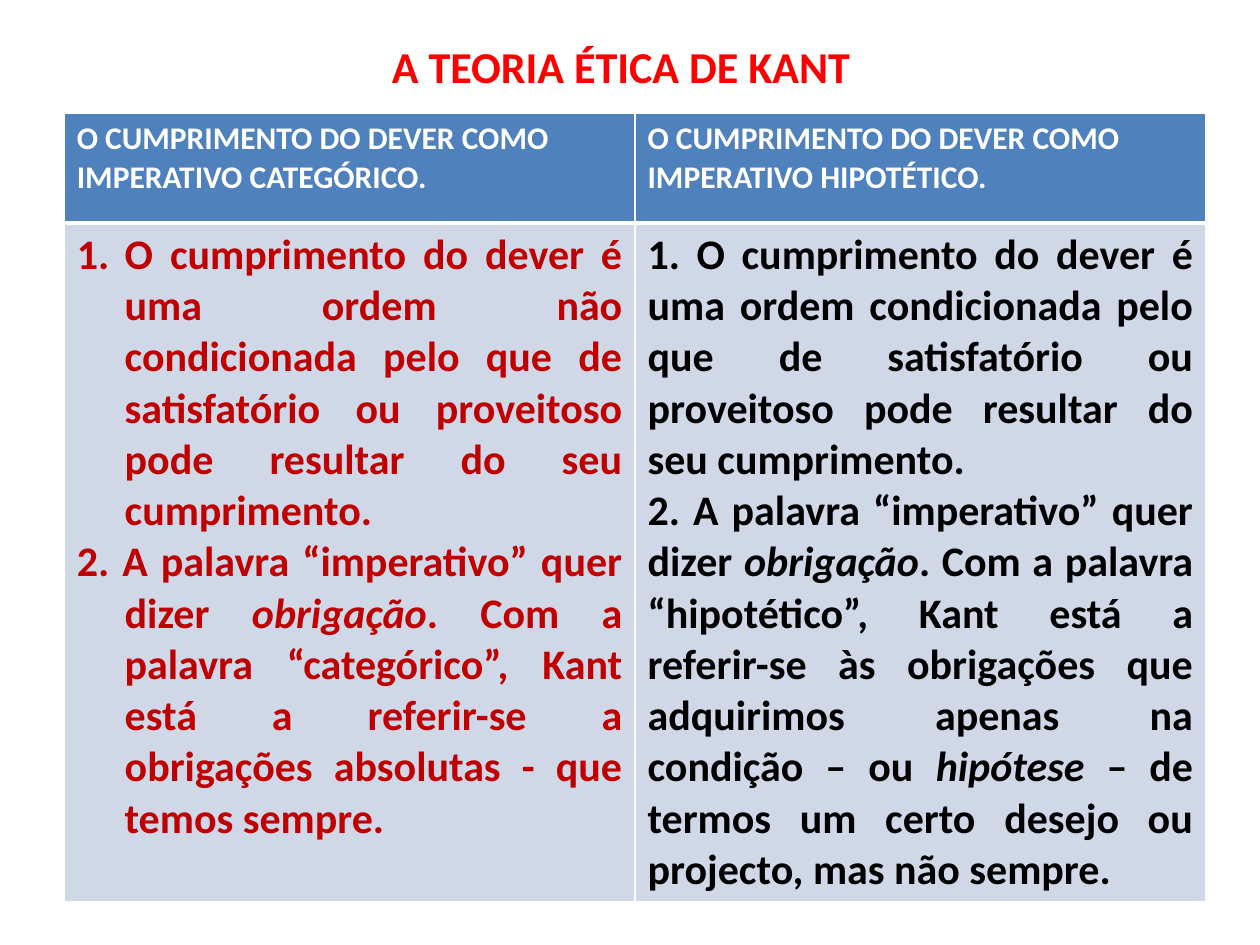
from dataclasses import dataclass

from lxml import etree
from pptx import Presentation
from pptx.dml.color import RGBColor
from pptx.enum.text import MSO_ANCHOR, PP_ALIGN
from pptx.oxml.ns import qn
from pptx.util import Inches, Pt

MID = MSO_ANCHOR.MIDDLE
LEFT, CENTER, JUST = PP_ALIGN.LEFT, PP_ALIGN.CENTER, PP_ALIGN.JUSTIFY
WIDE, HIGH = Inches(10), Inches(7.5)
INDENT = Inches(0.38)


@dataclass
class Theme:
    font: str = "Calibri"
    title: str = "FF0000"
    head: str = "4F81BD"
    body: str = "D0D8E8"
    white: str = "FFFFFF"
    red: str = "C00000"
    black: str = "000000"
    big: float = 25.2
    mid: float = 24
    small: float = 18


class Deck:
    def __init__(self, theme):
        self.theme = theme
        self.file = Presentation()
        self.file.slide_width, self.file.slide_height = WIDE, HIGH
        self.slide = self.file.slides.add_slide(self.file.slide_layouts[5])

    def place(self, x, y, w, h):
        """Turn shares of the slide into lengths."""
        return int(x * WIDE), int(y * HIGH), int(w * WIDE), int(h * HIGH)

    def add_runs(self, para, runs, size, color, align):
        """Fill a paragraph; every second run is italic."""
        para.alignment = align
        for i, text in enumerate(runs):
            run = para.add_run()
            run.text = text
            font = run.font
            font.name, font.size, font.bold = self.theme.font, Pt(size), True
            font.italic = i % 2 == 1
            font.color.rgb = RGBColor.from_string(color)

    def title(self, text, box):
        shape = self.slide.shapes.title
        shape.left, shape.top, shape.width, shape.height = self.place(*box)
        frame = shape.text_frame
        frame.vertical_anchor, frame.word_wrap = MID, True
        self.add_runs(frame.paragraphs[0], [text], self.theme.big, self.theme.title, CENTER)

    def table(self, box, rows, cols):
        """Add a table whose rows are given as shares of its height."""
        frame = self.slide.shapes.add_table(len(rows), cols, *self.place(*box))
        for row, part in zip(frame.table.rows, rows):
            row.height = int(part * box[3] * HIGH)
        return frame.table

    def cell(self, cell, paras, fill, size, color, align, base=1):
        """Style one cell and add its paragraphs."""
        props = cell._tc.get_or_add_tcPr()
        for side, width in zip("LRTB", (1, 1, 1, base)):
            line = etree.SubElement(props, qn("a:ln" + side), w=str(Pt(width)))
            solid = etree.SubElement(line, qn("a:solidFill"))
            etree.SubElement(solid, qn("a:srgbClr"), val=self.theme.white)
        cell.fill.solid()
        cell.fill.fore_color.rgb = RGBColor.from_string(fill)
        frame = cell.text_frame
        for i, runs in enumerate(paras):
            para = frame.add_paragraph() if i else frame.paragraphs[0]
            self.add_runs(para, runs, size, color, align)

    def hang(self, para, number=False):
        """Give a paragraph a hanging indent, with a number if asked."""
        props = para._p.get_or_add_pPr()
        props.set("marL", str(INDENT))
        props.set("indent", str(-INDENT))
        if number:
            etree.SubElement(props, qn("a:buFont"), typeface="+mj-lt")
            etree.SubElement(props, qn("a:buAutoNum"), type="arabicPeriod")


HEADS = [
    "O CUMPRIMENTO DO DEVER COMO IMPERATIVO CATEGÓRICO.",
    "O CUMPRIMENTO DO DEVER COMO IMPERATIVO HIPOTÉTICO.",
]
DUTY = "O cumprimento do dever é uma ordem "
GAIN = "condicionada pelo que de satisfatório ou proveitoso pode resultar do seu cumprimento."
WORD = ["2. A palavra “imperativo” quer dizer ", "obrigação"]
BODIES = [
    [
        [DUTY + "não " + GAIN],
        WORD + [". Com a palavra “categórico”, Kant está a referir-se a "
                "obrigações absolutas - que temos sempre. "],
    ],
    [
        ["1. " + DUTY + GAIN],
        WORD + [". Com a palavra “hipotético”, Kant está a referir-se às "
                "obrigações que adquirimos apenas na condição – ou ",
                "hipótese", " – de termos um certo desejo ou projecto, mas não sempre. "],
    ],
]


def main():
    theme = Theme()
    deck = Deck(theme)

    # Title
    deck.title("A TEORIA ÉTICA DE KANT", (0.043, 0.05, 0.9, 0.04))

    # Two columns: heading above argument
    grid = deck.table((0.051, 0.12, 0.906, 0.83), (0.14, 0.86), 2)
    inks = (theme.red, theme.black)
    for col, (head, body, ink) in enumerate(zip(HEADS, BODIES, inks)):
        deck.cell(grid.cell(0, col), [[head]], theme.head, theme.small, theme.white, LEFT, 3)
        deck.cell(grid.cell(1, col), body, theme.body, theme.mid, ink, JUST)

    # Hanging list on the left
    first, second = grid.cell(1, 0).text_frame.paragraphs
    deck.hang(first, number=True)
    deck.hang(second)

    deck.file.save("out.pptx")


if __name__ == "__main__":
    main()
